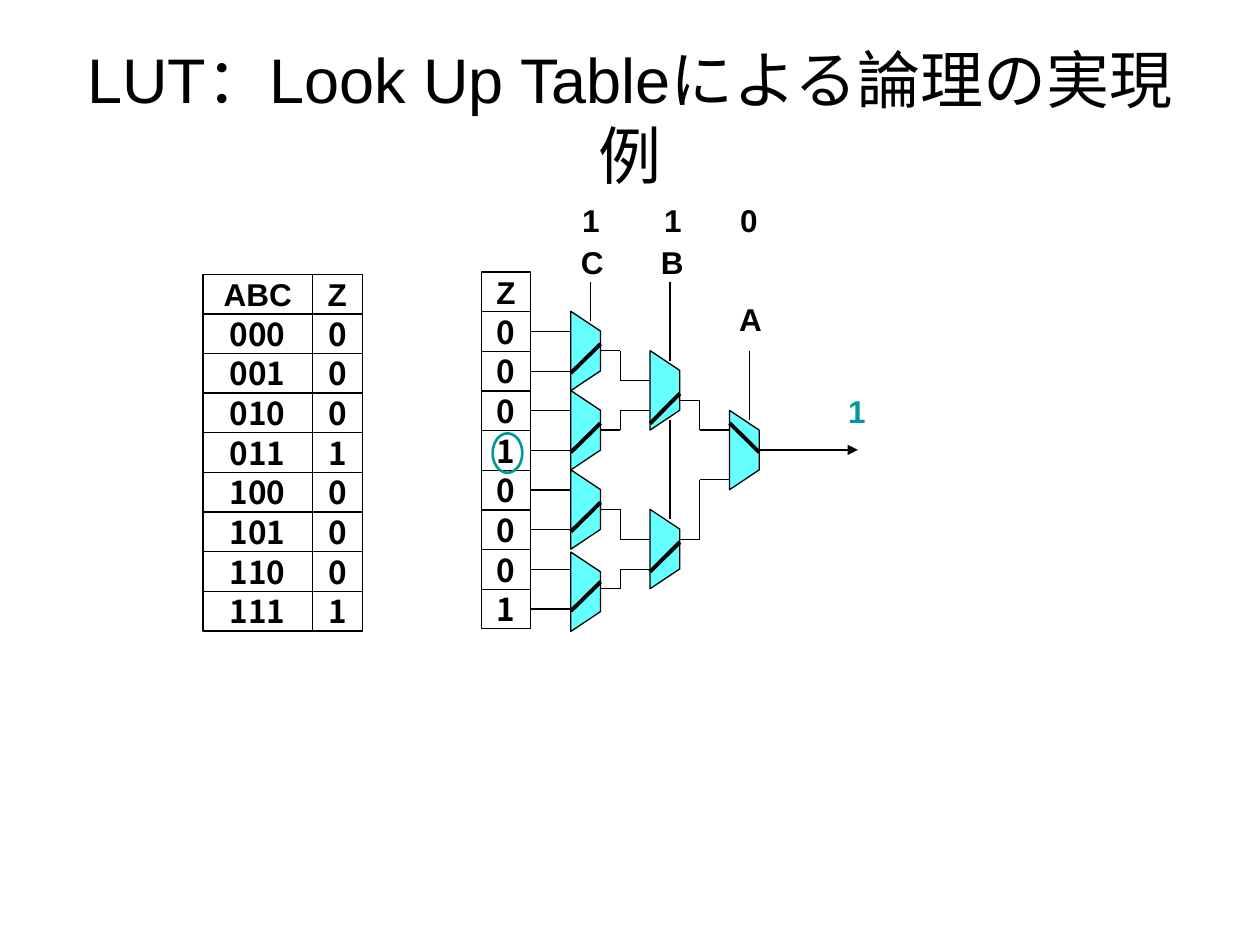
from lxml import etree
from pptx import Presentation
from pptx.dml.color import RGBColor
from pptx.enum.shapes import MSO_CONNECTOR, MSO_SHAPE
from pptx.enum.text import MSO_ANCHOR, MSO_AUTO_SIZE, PP_ALIGN
from pptx.oxml.ns import qn
from pptx.util import Pt

STRAIGHT = MSO_CONNECTOR.STRAIGHT
RECTANGLE, OVAL = MSO_SHAPE.RECTANGLE, MSO_SHAPE.OVAL
MIDDLE = MSO_ANCHOR.MIDDLE
NO_FIT, FIT_SHAPE = MSO_AUTO_SIZE.NONE, MSO_AUTO_SIZE.SHAPE_TO_FIT_TEXT
LEFT, CENTER = PP_ALIGN.LEFT, PP_ALIGN.CENTER

BLACK, WHITE, CYAN, TEAL = "000000", "FFFFFF", "66FFFF", "009999"
LATIN, JAPANESE = "Arial", "Noto Sans CJK JP"
THIN, MEDIUM, THICK = 0.75, 1.5, 2.25

ROW = 22.65
NARROW, WIDE = 28.4, 62.6
MUX_WIDTH, MUX_HEIGHT, MUX_SLOPE = 17, 45.35, 11.34
STAGES = (326.2, 371.5, 416.9)
INPUT_LEFT, INPUT_TOP = 275, 155.5


def color(value):
    return RGBColor.from_string(value)


class Diagram:
    """Holds the text style and the slide being drawn."""

    def __init__(self, slide, size=18):
        self.slide = slide
        self.shapes = slide.shapes
        self.size = size

    def add_text(self, frame, text, align, font=LATIN, ink=BLACK, size=None, bold=True):
        para = frame.paragraphs[0]
        para.alignment = align
        span = para.add_run()
        span.text = text
        span.font.name = font
        span.font.size = Pt(size or self.size)
        span.font.bold = bold
        span.font.color.rgb = color(ink)
        east_asian = etree.SubElement(span.font._element, qn("a:ea"))
        east_asian.set("typeface", JAPANESE)

    def title(self, text, left, top, width, height):
        box = self.shapes.title
        box.left, box.top = Pt(left), Pt(top)
        box.width, box.height = Pt(width), Pt(height)
        frame = box.text_frame
        frame.auto_size = NO_FIT
        frame.vertical_anchor = MIDDLE
        self.add_text(frame, text, CENTER, size=36, bold=False)

    def paint(self, shape, fill, line=BLACK, weight=THIN):
        shape.shadow.inherit = False
        if fill:
            shape.fill.solid()
            shape.fill.fore_color.rgb = color(fill)
        else:
            shape.fill.background()
        shape.line.color.rgb = color(line)
        shape.line.width = Pt(weight)

    def column(self, left, top, width, heading, values):
        """Stack one heading cell and its value cells."""
        for row, text in enumerate([heading, *values]):
            cell = self.shapes.add_shape(
                RECTANGLE, Pt(left), Pt(top + row * ROW), Pt(width), Pt(ROW))
            self.paint(cell, WHITE)
            frame = cell.text_frame
            frame.word_wrap = False
            frame.vertical_anchor = MIDDLE
            self.add_text(frame, text, CENTER, JAPANESE if row else LATIN)

    def mux(self, left, top):
        right, bottom = left + MUX_WIDTH, top + MUX_HEIGHT
        outline = self.shapes.build_freeform(Pt(left), Pt(bottom))
        corners = [(right, bottom - MUX_SLOPE), (right, top + MUX_SLOPE), (left, top)]
        outline.add_line_segments([(Pt(x), Pt(y)) for x, y in corners], close=True)
        self.paint(outline.convert_to_shape(), CYAN)

    def wire(self, *points, weight=THIN, arrow=False):
        """Join the points with straight segments."""
        for (x1, y1), (x2, y2) in zip(points, points[1:]):
            line = self.shapes.add_connector(STRAIGHT, Pt(x1), Pt(y1), Pt(x2), Pt(y2))
            line.line.color.rgb = color(BLACK)
            line.line.width = Pt(weight)
            if arrow:
                etree.SubElement(line.line._get_or_add_ln(), qn("a:tailEnd"), type="triangle")
            etree.SubElement(line._element.spPr, qn("a:effectLst"))

    def label(self, text, left, top, width, ink=BLACK):
        box = self.shapes.add_textbox(Pt(left), Pt(top), Pt(width), Pt(29))
        frame = box.text_frame
        frame.word_wrap = False
        frame.auto_size = FIT_SHAPE
        self.add_text(frame, text, LEFT, ink=ink)

    def ring(self, left, top, width, height):
        ring = self.shapes.add_shape(OVAL, Pt(left), Pt(top), Pt(width), Pt(height))
        self.paint(ring, None, TEAL, MEDIUM)


def main():
    deck = Presentation()
    deck.slide_width, deck.slide_height = Pt(720), Pt(540)
    page = Diagram(deck.slides.add_slide(deck.slide_layouts[5]))
    page.title("LUT：Look Up Tableによる論理の実現例", 36, 21.6, 648, 90)

    outputs = "00010001"
    page.column(116, 156.7, WIDE, "ABC", [f"{row:03b}" for row in range(8)])
    page.column(116 + WIDE, 156.7, NARROW, "Z", outputs)
    page.column(INPUT_LEFT, INPUT_TOP, NARROW, "Z", outputs)

    first, second, third = STAGES
    # left, top, then the drop from the top to each end of the selected input
    muxes = [
        (first, 177.9, 35.3, 18.6), (first, 223.2, 35.3, 18.6),
        (first, 268.5, 35.3, 18.6), (first, 315.5, 33.7, 17),
        (second, 200.4, 41.6, 24.5), (second, 291.1, 35.7, 18.7),
        (third, 234.5, 7.2, 24),
    ]
    for left, top, _, _ in muxes:
        page.mux(left, top)

    input_right = INPUT_LEFT + NARROW
    for row in range(1, 9):
        y = INPUT_TOP + (row + 0.5) * ROW
        page.wire((input_right, y), (first, y))

    links = [
        (first, 200.4, 217.4, second), (first, 245.7, 234.5, second),
        (first, 291.1, 308.2, second), (first, 336.4, 325.3, second),
        (second, 228.8, 245.7, third), (second, 308.2, 274.1, third),
    ]
    for source, start, end, target in links:
        bend = source + MUX_WIDTH + MUX_SLOPE
        page.wire((source + MUX_WIDTH, start), (bend, start), (bend, end), (target, end))
    page.wire((third + MUX_WIDTH, 257.1), (490.3, 257.1), arrow=True)

    selects = [(first, 183.6, 160.9), (second, 296.8, 240.2),
               (second, 206.1, 160.9), (third, 240.2, 200.4)]
    for left, bottom, top in selects:
        page.wire((left + MUX_SLOPE, bottom), (left + MUX_SLOPE, top))

    for left, top, start, end in muxes:
        page.wire((left, top + start), (left + MUX_WIDTH, top + end), weight=THICK)

    page.ring(281.5, 247.6, 17, 22.6)
    labels = [
        ("C", 324.9, 135.5, 25.5), ("B", 370.6, 135.5, 25.5), ("A", 415.3, 168, 27),
        ("1", 325.5, 111.3, 22.3), ("1", 372.4, 111.3, 22.3), ("0", 415.8, 111.3, 22.3),
    ]
    for text, left, top, width in labels:
        page.label(text, left, top, width)
    page.label("1", 477.5, 220.5, 22.3, TEAL)

    deck.save("out.pptx")


if __name__ == "__main__":
    main()
